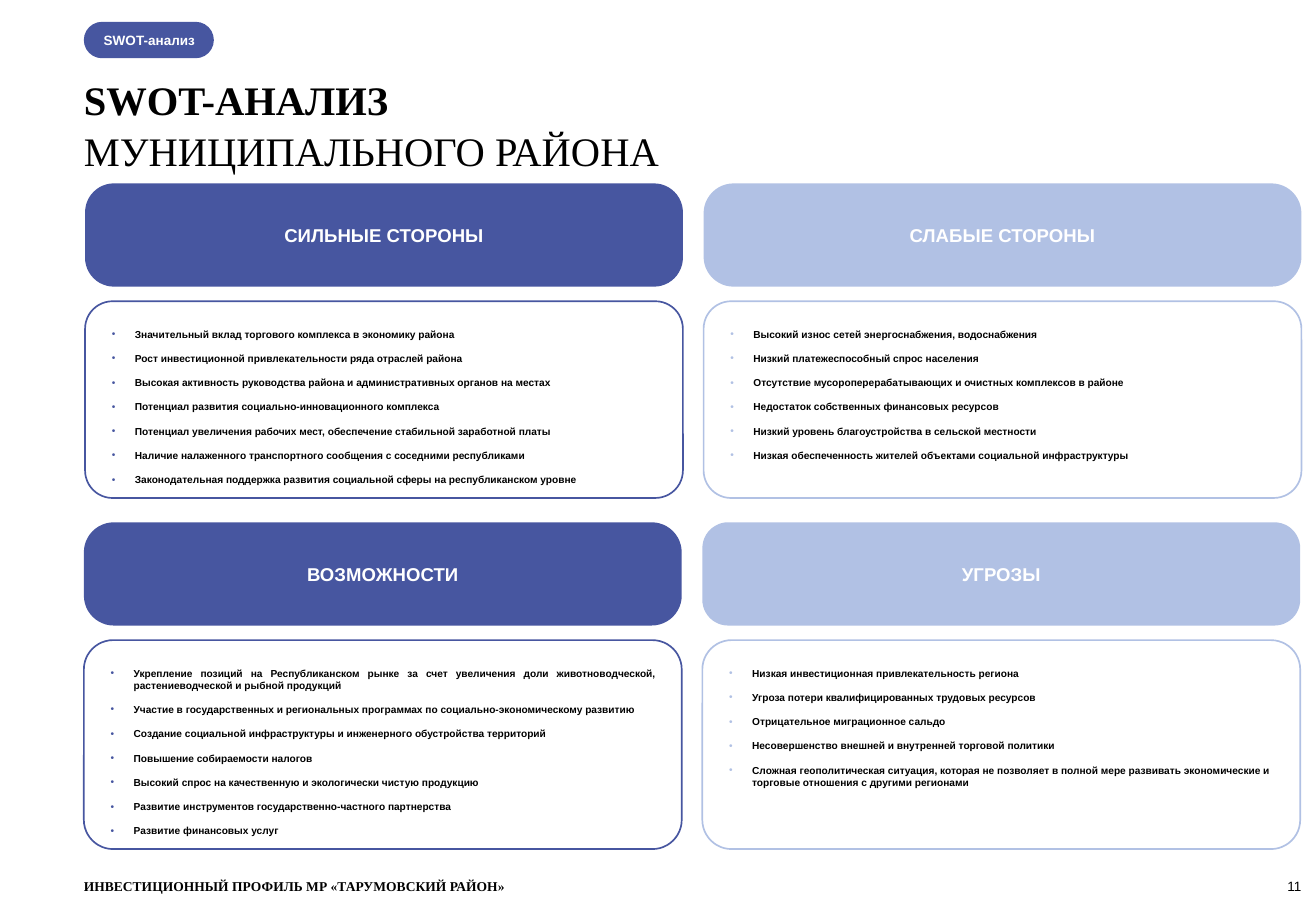
from lxml.etree import SubElement
from pptx import Presentation
from pptx.dml.color import RGBColor
from pptx.enum.shapes import MSO_SHAPE as Shape
from pptx.enum.text import MSO_ANCHOR as Anchor, MSO_AUTO_SIZE as AutoSize, PP_ALIGN as Align
from pptx.oxml.ns import qn
from pptx.util import Inches, Pt

COLORS = {"dark": "4756A0", "light": "B1C1E4", "black": "000000", "white": "FFFFFF"}
CARD_WIDTH = 4.92
HEADER_HEIGHT = 0.85
LIST_INSET = 0.22


def rgb(name):
    return RGBColor.from_string(COLORS[name])


def write(shape, lines, size=8, font="Arial", color="black", bold=(True,), align=Align.LEFT,
          anchor=Anchor.TOP, left=0, spacing=1.0, gap=0, bullet=None):
    """Fill a shape with one paragraph per line; bold flags are used in turn."""
    frame = shape.text_frame
    frame.word_wrap = True
    frame.auto_size = AutoSize.NONE
    frame.vertical_anchor = anchor
    frame.margin_left = Inches(left)
    frame.margin_top = frame.margin_right = frame.margin_bottom = 0
    for index, line in enumerate(lines):
        paragraph = frame.paragraphs[0] if index == 0 else frame.add_paragraph()
        paragraph.alignment = align
        paragraph.line_spacing = spacing
        paragraph.space_before = Pt(0)
        paragraph.space_after = Pt(gap)
        run = paragraph.add_run()
        run.text = line
        run.font.size = Pt(size)
        run.font.name = font
        run.font.bold = bold[index % len(bold)]
        run.font.color.rgb = rgb(color)
        if bullet:
            properties = paragraph._p.get_or_add_pPr()
            properties.set("marL", str(Inches(0.19)))
            properties.set("indent", str(Inches(-0.19)))
            bullet_color = SubElement(properties, qn("a:buClr"))
            SubElement(bullet_color, qn("a:srgbClr"), val=COLORS[bullet])
            SubElement(properties, qn("a:buFont"), typeface="Arial")
            SubElement(properties, qn("a:buChar"), char="•")


presentation = Presentation()
presentation.slide_width = Inches(10.83)
presentation.slide_height = Inches(7.5)
# The comparison layout holds a title and four body placeholders
slide = presentation.slides.add_slide(presentation.slide_layouts[4])
title, *list_bodies = slide.placeholders


def add_rounded(left, top, width, height, radius, fill=None, line=None):
    shape = slide.shapes.add_shape(
        Shape.ROUNDED_RECTANGLE, Inches(left), Inches(top), Inches(width), Inches(height))
    shape.adjustments[0] = radius
    shape.shadow.inherit = False
    if fill:
        shape.fill.solid()
        shape.fill.fore_color.rgb = rgb(fill)
    else:
        shape.fill.background()
    if line:
        shape.line.color.rgb = rgb(line)
        shape.line.width = Pt(1)
    else:
        shape.line.fill.background()
    return shape


# Section tag and title
tag = add_rounded(0.69, 0.18, 1.07, 0.3, 0.5, fill="dark")
write(tag, ["SWOT-анализ"], color="white", anchor=Anchor.MIDDLE, left=0.12)

title.left, title.top, title.width, title.height = map(Inches, (0.69, 0.6, 10.02, 0.81))
write(title, ["SWOT-АНАЛИЗ", "МУНИЦИПАЛЬНОГО РАЙОНА"], size=24, font="Times New Roman",
      bold=(True, False), spacing=1.05)

# Quadrants: heading, colour, left, header top, card height, header radius, alignment, items
quadrants = [
    ("СИЛЬНЫЕ СТОРОНЫ", "dark", 0.7, 1.51, 1.62, 0.28, Align.LEFT, [
        "Значительный вклад торгового комплекса в экономику района",
        "Рост инвестиционной привлекательности ряда отраслей района",
        "Высокая активность руководства района и административных органов на местах",
        "Потенциал развития социально-инновационного комплекса",
        "Потенциал увеличения рабочих мест, обеспечение стабильной заработной платы",
        "Наличие налаженного транспортного сообщения с соседними республиками",
        "Законодательная поддержка развития социальной сферы на республиканском уровне",
    ]),
    ("СЛАБЫЕ СТОРОНЫ", "light", 5.79, 1.51, 1.62, 0.29, Align.LEFT, [
        "Высокий износ сетей энергоснабжения, водоснабжения",
        "Низкий платежеспособный спрос населения",
        "Отсутствие мусороперерабатывающих и очистных комплексов в районе",
        "Недостаток собственных финансовых ресурсов",
        "Низкий уровень благоустройства в сельской местности",
        "Низкая обеспеченность жителей объектами социальной инфраструктуры",
    ]),
    ("ВОЗМОЖНОСТИ", "dark", 0.69, 4.3, 1.72, 0.29, Align.JUSTIFY, [
        "Укрепление позиций на Республиканском рынке за счет увеличения доли "
        "животноводческой, растениеводческой и рыбной продукций",
        "Участие в государственных и региональных программах по социально-экономическому развитию",
        "Создание социальной инфраструктуры и инженерного обустройства территорий",
        "Повышение собираемости налогов",
        "Высокий спрос на качественную и экологически чистую продукцию",
        "Развитие инструментов государственно-частного партнерства",
        "Развитие финансовых услуг",
    ]),
    ("УГРОЗЫ", "light", 5.78, 4.3, 1.72, 0.25, Align.LEFT, [
        "Низкая инвестиционная привлекательность региона",
        "Угроза потери квалифицированных трудовых ресурсов",
        "Отрицательное миграционное сальдо",
        "Несовершенство внешней и внутренней торговой политики",
        "Сложная геополитическая ситуация, которая не позволяет в полной мере развивать "
        "экономические и торговые отношения с другими регионами",
    ]),
]
for body, quadrant in zip(list_bodies, quadrants):
    heading, color, left, top, card_height, radius, align, items = quadrant
    header = add_rounded(left, top, CARD_WIDTH, HEADER_HEIGHT, radius, fill=color)
    write(header, [heading], size=11, color="white", align=Align.CENTER, anchor=Anchor.MIDDLE)

    card_top = top + HEADER_HEIGHT + 0.12
    add_rounded(left, card_top, CARD_WIDTH, card_height, 0.14, line=color)
    body.left = Inches(left + LIST_INSET)
    body.top = Inches(card_top + LIST_INSET)
    body.width = Inches(CARD_WIDTH - 2 * LIST_INSET)
    body.height = Inches(card_height - LIST_INSET)
    write(body, items, size=6, align=align, gap=7.2, bullet=color)

# Footer and page number
footer = slide.shapes.add_textbox(Inches(0.69), Inches(7.23), Inches(8), Inches(0.13))
write(footer, ["ИНВЕСТИЦИОННЫЙ ПРОФИЛЬ МР «ТАРУМОВСКИЙ РАЙОН»"], font="Times New Roman")
page_number = slide.shapes.add_textbox(Inches(9.91), Inches(7.23), Inches(0.8), Inches(0.13))
write(page_number, ["11"], bold=(False,), align=Align.RIGHT, anchor=Anchor.BOTTOM)

presentation.save("out.pptx")
